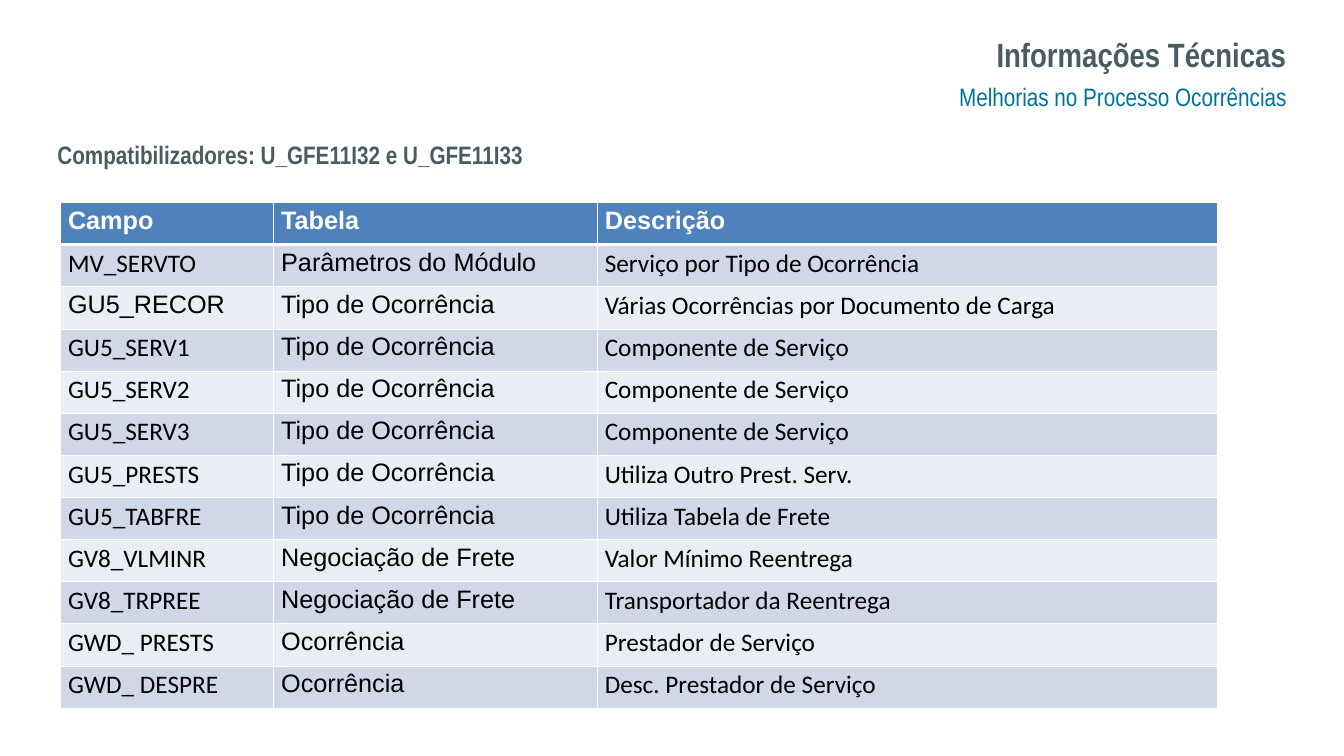
from dataclasses import dataclass

from lxml import etree
from pptx import Presentation
from pptx.dml.color import RGBColor
from pptx.enum.text import MSO_ANCHOR, PP_ALIGN
from pptx.oxml.ns import qn
from pptx.util import Cm, Pt

LEFT, RIGHT = PP_ALIGN.LEFT, PP_ALIGN.RIGHT
TOP, MIDDLE = MSO_ANCHOR.TOP, MSO_ANCHOR.MIDDLE
TITLE_ONLY = 5


@dataclass(frozen=True)
class Theme:
    slate: str = "4A5C61"
    teal: str = "00739C"
    white: str = "FFFFFF"
    black: str = "000000"
    header: str = "4F81BD"
    bands: tuple = ("D0D8E8", "E9EDF4")
    heading_font: str = "Arial Narrow"
    label_font: str = "Arial"
    field_font: str = "Calibri"
    title_size: int = 32
    text_size: int = 24
    grid_line: int = 1
    header_line: int = 3


@dataclass(frozen=True)
class Style:
    font: str
    color: str
    size: int = 24
    bold: bool = False


@dataclass(frozen=True)
class Box:
    left: float
    top: float
    width: float
    height: float

    def lengths(self) -> tuple:
        return Cm(self.left), Cm(self.top), Cm(self.width), Cm(self.height)


@dataclass(frozen=True)
class Field:
    name: str
    table: str
    description: str
    name_font: str = "Calibri"


THEME = Theme()
TITLE_BOX = Box(14.25, 1.04, 29.21, 1.55)
SUBTITLE_BOX = Box(28.09, 2.62, 15.37, 2.36)
UPDATERS_BOX = Box(1.68, 4.57, 41.78, 1.27)
COLUMN_WIDTHS = (7.16, 10.87, 20.83)
FIELDS_BOX = Box(2.03, 6.81, sum(COLUMN_WIDTHS), 16.99)

HEADERS = ("Campo", "Tabela", "Descrição")
OCCURRENCE_TYPE = "Tipo de Ocorrência"
FREIGHT_DEAL = "Negociação de Frete"
OCCURRENCE = "Ocorrência"
SERVICE_PART = "Componente de Serviço"
FIELDS = (
    Field("MV_SERVTO", "Parâmetros do Módulo", "Serviço por Tipo de Ocorrência"),
    Field("GU5_RECOR", OCCURRENCE_TYPE,
          "Várias Ocorrências por Documento de Carga", THEME.label_font),
    *(Field(f"GU5_SERV{n}", OCCURRENCE_TYPE, SERVICE_PART) for n in (1, 2, 3)),
    Field("GU5_PRESTS", OCCURRENCE_TYPE, "Utiliza Outro Prest. Serv."),
    Field("GU5_TABFRE", OCCURRENCE_TYPE, "Utiliza Tabela de Frete"),
    Field("GV8_VLMINR", FREIGHT_DEAL, "Valor Mínimo Reentrega"),
    Field("GV8_TRPREE", FREIGHT_DEAL, "Transportador da Reentrega"),
    Field("GWD_ PRESTS", OCCURRENCE, "Prestador de Serviço"),
    Field("GWD_ DESPRE", OCCURRENCE, "Desc. Prestador de Serviço"),
)


def write(frame, text: str, style: Style, align=LEFT) -> None:
    paragraph = frame.paragraphs[0]
    paragraph.alignment = align
    run = paragraph.add_run()
    run.text = text
    run.font.name = style.font
    run.font.size = Pt(style.size)
    run.font.bold = style.bold
    run.font.color.rgb = RGBColor.from_string(style.color)


def fill_text_shape(shape, text: str, style: Style, align, anchor) -> None:
    shape.text_frame.word_wrap = True
    shape.text_frame.vertical_anchor = anchor
    write(shape.text_frame, text, style, align)


def set_borders(cell, top: int, bottom: int) -> None:
    properties = cell._tc.get_or_add_tcPr()
    side = THEME.grid_line
    for tag, width in (("lnL", side), ("lnR", side), ("lnT", top), ("lnB", bottom)):
        line = etree.SubElement(properties, qn(f"a:{tag}"), w=str(Pt(width)))
        fill = etree.SubElement(line, qn("a:solidFill"))
        etree.SubElement(fill, qn("a:srgbClr"), val=THEME.white)


def draw_row(table, row: int, texts: tuple, styles: tuple, fill: str) -> None:
    top = THEME.header_line if row == 1 else THEME.grid_line
    bottom = THEME.header_line if row == 0 else THEME.grid_line
    for column, (text, style) in enumerate(zip(texts, styles)):
        cell = table.cell(row, column)
        set_borders(cell, top, bottom)
        cell.fill.solid()
        cell.fill.fore_color.rgb = RGBColor.from_string(fill)
        write(cell.text_frame, text, style)


def draw_fields(slide) -> None:
    row_count = len(FIELDS) + 1
    table = slide.shapes.add_table(
        row_count, len(HEADERS), *FIELDS_BOX.lengths()).table
    for column, width in zip(table.columns, COLUMN_WIDTHS):
        column.width = Cm(width)
    for row in table.rows:
        row.height = Cm(FIELDS_BOX.height / row_count)

    header = Style(THEME.label_font, THEME.white, THEME.text_size, True)
    draw_row(table, 0, HEADERS, (header,) * len(HEADERS), THEME.header)
    for row, field in enumerate(FIELDS, start=1):
        fonts = (field.name_font, THEME.label_font, THEME.field_font)
        styles = tuple(Style(font, THEME.black, THEME.text_size) for font in fonts)
        texts = (field.name, field.table, field.description)
        draw_row(table, row, texts, styles, THEME.bands[(row - 1) % 2])


def main() -> None:
    deck = Presentation()
    deck.slide_width, deck.slide_height = Cm(45.14), Cm(25.4)
    slide = deck.slides.add_slide(deck.slide_layouts[TITLE_ONLY])

    # Title and subtitle
    title = slide.shapes.title
    title.left, title.top, title.width, title.height = TITLE_BOX.lengths()
    fill_text_shape(title, "Informações Técnicas",
                    Style(THEME.heading_font, THEME.slate, THEME.title_size, True),
                    RIGHT, MIDDLE)
    subtitle = slide.shapes.add_textbox(*SUBTITLE_BOX.lengths())
    fill_text_shape(subtitle, "Melhorias no Processo Ocorrências",
                    Style(THEME.heading_font, THEME.teal, THEME.text_size),
                    RIGHT, TOP)

    # Table of fields
    draw_fields(slide)

    # Updater programs
    updaters = slide.shapes.add_textbox(*UPDATERS_BOX.lengths())
    fill_text_shape(updaters, "Compatibilizadores: U_GFE11I32 e U_GFE11I33",
                    Style(THEME.heading_font, THEME.slate, THEME.text_size, True),
                    LEFT, TOP)

    deck.save("out.pptx")


if __name__ == "__main__":
    main()
